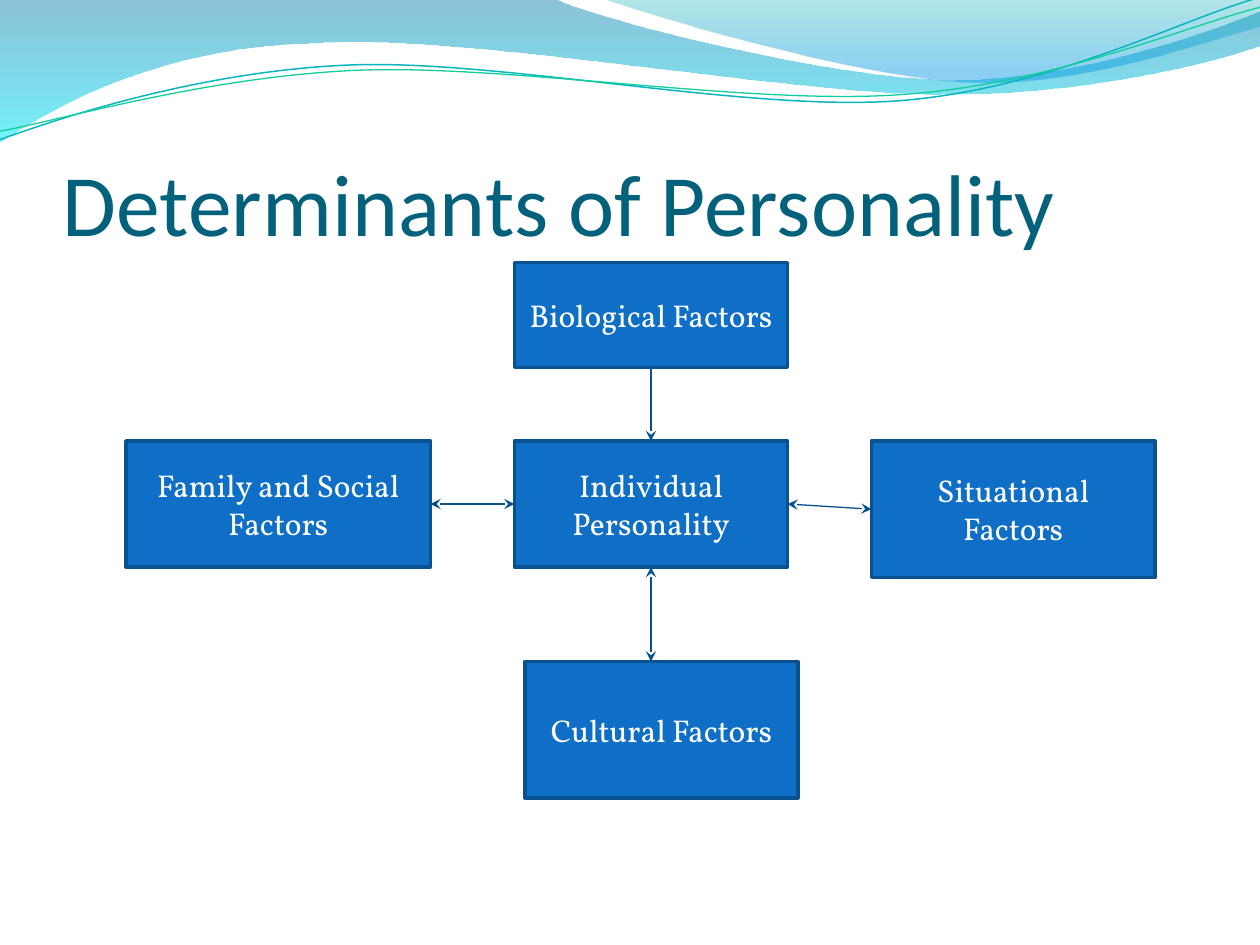
import pptx
import pptx.dml.color
import pptx.enum.shapes
import pptx.enum.text
import pptx.oxml.ns
import pptx.util
from lxml import etree

PX = 7620  # EMU per px, 120 px to the inch
TOP, LEFT, BOTTOM, RIGHT = range(4)
COLORS = {
    "title": "04617B", "box": "0F6FC6", "box_line": "0A5190",
    "arrow": "075192", "text": "FFFFFF",
    "wave_top": "0079AD", "wave_bottom": "00E9F7",
    "crest_top": "00ABB4", "crest_bottom": "0099E4",
    "teal": "09B6BE", "green": "10CF9B",
}
# Each path is a start point, then points (2 numbers) or cubic curves (6 numbers)
WAVE = [(0, 0), (528, -1), (571, 20, 797, 76, 910, 76),
        (1024, 76, 1150, 31, 1200, 11), (1201, 43),
        (1180, 53, 1044, 91, 895, 90), (746, 90, 458, 34, 308, 41),
        (155, 43, 55, 100, -1, 136)]
CREST = [(575, -1), (611, 13, 818, 74, 923, 78),
         (1027, 83, 1153, 38, 1200, 25), (1200, 0)]
TEAL_LINE = [(0, 133), (58, 112, 190, 68, 332, 62),
             (474, 56, 712, 107, 856, 96), (1000, 85, 1126, 18, 1198, -2)]
GREEN_LINE = [(0, 125), (56, 115, 197, 73, 340, 67),
              (484, 61, 716, 101, 860, 90), (1003, 80, 1129, 25, 1200, 7)]


def px(n):
    return n * PX


def rgb(name):
    return pptx.dml.color.RGBColor.from_string(COLORS[name])


def sub(parent, tag, **attrs):
    return etree.SubElement(parent, pptx.oxml.ns.qn(tag), attrs)


def set_line(s, color, width):
    s.line.color.rgb = rgb(color)
    s.line.width = pptx.util.Pt(width)


def add_path(slide, path, close):
    """Build the outline through all points, then join triples into curves."""
    points = [(px(seg[i]), px(seg[i + 1]))
              for seg in path for i in range(0, len(seg), 2)]
    builder = slide.shapes.build_freeform(*points[0])
    builder.add_line_segments(points[1:], close=close)
    s = builder.convert_to_shape()
    s.shadow.inherit = False
    lines = iter(list(s._element.spPr.iter(pptx.oxml.ns.qn("a:lnTo"))))
    for seg in path[1:]:
        first = next(lines)
        if len(seg) == 6:
            first.tag = pptx.oxml.ns.qn("a:cubicBezTo")
            for _ in range(2):
                control = next(lines)
                first.append(control[0])
                control.getparent().remove(control)
    return s


def add_gradient_wave(slide, path, stops):
    """Add a filled wave; stops are (position, colour, opacity percent)."""
    s = add_path(slide, path, True)
    s.line.fill.background()
    s.fill.gradient()
    s.fill.gradient_angle = 270
    for stop, (position, color, _) in zip(s.fill.gradient_stops, stops):
        stop.position = position
        stop.color.rgb = rgb(color)
    clrs = s._element.spPr.iter(pptx.oxml.ns.qn("a:srgbClr"))
    for clr, (_, _, opacity) in zip(clrs, stops):
        sub(clr, "a:alpha", val=str(opacity * 1000))


def add_wave_line(slide, path, color, width):
    s = add_path(slide, path, False)
    s.fill.background()
    set_line(s, color, width)


def add_run(p, text, font, size, color):
    r = p.add_run()
    r.text = text
    r.font.name = font
    r.font.size = pptx.util.Pt(size)
    r.font.color.rgb = rgb(color)


def add_title(slide, text):
    tf = slide.shapes.add_textbox(px(60), px(92), px(1080), px(150)).text_frame
    tf.word_wrap = True
    tf.vertical_anchor = pptx.enum.text.MSO_ANCHOR.BOTTOM
    tf.margin_left = tf.margin_right = tf.margin_bottom = 0
    add_run(tf.paragraphs[0], text, "Calibri", 50, "title")


def add_box(slide, text, x, y, w, h, margin=12):
    s = slide.shapes.add_shape(pptx.enum.shapes.MSO_SHAPE.RECTANGLE,
                               px(x), px(y), px(w), px(h))
    s.shadow.inherit = False
    s.fill.solid()
    s.fill.fore_color.rgb = rgb("box")
    set_line(s, "box_line", 2)
    tf = s.text_frame
    tf.word_wrap = True
    tf.margin_left = tf.margin_right = px(margin)
    tf.vertical_anchor = pptx.enum.text.MSO_ANCHOR.MIDDLE
    p = tf.paragraphs[0]
    p.alignment = pptx.enum.text.PP_ALIGN.CENTER
    add_run(p, text, "Vollkorn", 18, "text")
    return s


def add_arrow(slide, start, end, begin, finish=None, both=True):
    """Add an arrow; begin and finish are (box, side) pairs to join."""
    s = slide.shapes.add_connector(pptx.enum.shapes.MSO_CONNECTOR.STRAIGHT,
                                   *map(px, start + end))
    s.begin_connect(*begin)
    if finish:
        s.end_connect(*finish)
    set_line(s, "arrow", 0.75)
    ln = s.line._get_or_add_ln()
    if both:
        sub(ln, "a:headEnd", type="stealth")
    sub(ln, "a:tailEnd", type="stealth")
    sub(s._element.spPr, "a:effectLst")


def main():
    prs = pptx.Presentation()
    prs.slide_width, prs.slide_height = px(1200), px(900)
    slide = prs.slides.add_slide(prs.slide_layouts[6])

    add_gradient_wave(slide, WAVE,
                      [(0, "wave_top", 45), (1, "wave_bottom", 55)])
    add_gradient_wave(slide, CREST,
                      [(0, "crest_top", 30), (0.8, "crest_bottom", 45)])
    add_wave_line(slide, TEAL_LINE, "teal", 0.85)
    add_wave_line(slide, GREEN_LINE, "green", 0.75)
    add_title(slide, "Determinants of Personality")

    family = add_box(slide, "Family and Social Factors", 120, 420, 290, 120)
    person = add_box(slide, "Individual Personality", 490, 420, 260, 120)
    situation = add_box(slide, "Situational Factors", 830, 420, 270, 130,
                        margin=15)
    biology = add_box(slide, "Biological Factors", 490, 250, 260, 100)
    add_box(slide, "Cultural Factors", 500, 630, 260, 130)

    add_arrow(slide, (750, 480), (830, 485), (person, RIGHT), (situation, LEFT))
    add_arrow(slide, (410, 480), (490, 480), (family, RIGHT), (person, LEFT))
    add_arrow(slide, (620, 540), (620, 630), (person, BOTTOM))
    add_arrow(slide, (620, 350), (620, 420), (biology, BOTTOM), (person, TOP),
              both=False)
    prs.save("out.pptx")


if __name__ == "__main__":
    main()
